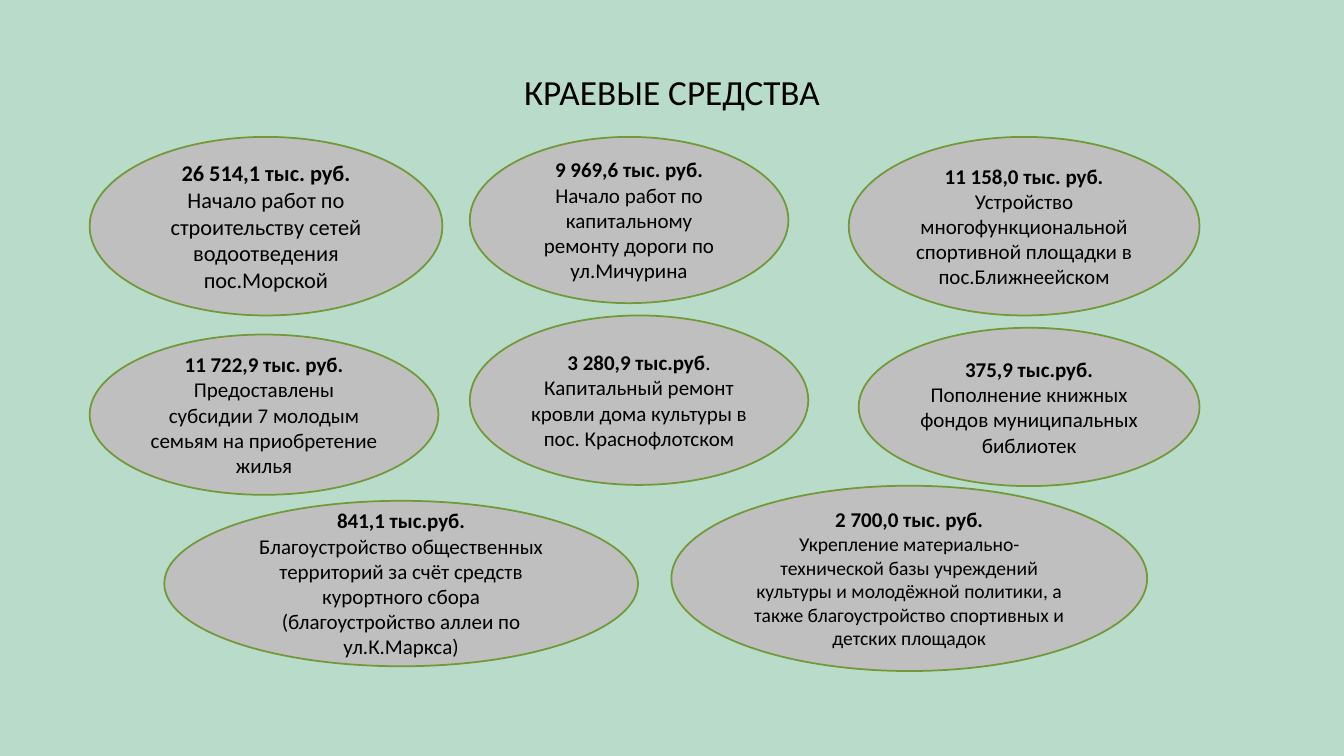
from pptx import Presentation
from pptx import util as u
from pptx.dml.color import RGBColor
from pptx.enum import shapes, text

TITLE = "КРАЕВЫЕ СРЕДСТВА"
TITLE_PLACE = (3.18, 1.73, 27.51, 1.27)

GRANTS = [
    ("26 514,1 тыс. руб.", "", "Начало работ по строительству сетей водоотведения пос.Морской",
     (2.26, 3.45, 8.89, 4.5), 16, 16),
    ("9 969,6 тыс. руб.", "", "Начало работ по капитальному ремонту дороги по ул.Мичурина",
     (11.84, 3.45, 8.03, 4.19), 15, 15),
    ("11 158,0 тыс. руб.", "", "Устройство многофункциональной спортивной площадки в пос.Ближнеейском",
     (21.39, 3.45, 8.84, 4.5), 15, 15),
    ("11 722,9 тыс. руб.", "", "Предоставлены субсидии 7 молодым семьям на приобретение жилья",
     (2.26, 8.43, 8.79, 4.04), 15, 15),
    ("3 280,9 тыс.руб", ".", "Капитальный ремонт кровли дома культуры в пос. Краснофлотском",
     (11.84, 7.95, 8.53, 4.27), 15, 15),
    ("375,9 тыс.руб.", "", "Пополнение книжных фондов муниципальных библиотек",
     (21.64, 8.26, 8.59, 3.99), 15, 15),
    ("841,1 тыс.руб.", "", "Благоустройство общественных территорий за счёт средств курортного сбора "
     "(благоустройство аллеи по ул.К.Маркса)",
     (4.14, 12.62, 11.94, 4.17), 15, 15),
    ("2 700,0 тыс. руб.", "", "Укрепление материально-технической базы учреждений культуры и молодёжной "
     "политики, а также благоустройство спортивных и детских площадок",
     (16.92, 12.24, 11.99, 4.67), 15, 14),
]

FONT = "Calibri"
BLACK = RGBColor(0x00, 0x00, 0x00)
MINT = RGBColor(0xB9, 0xDC, 0xCA)
GREY = RGBColor(0xBF, 0xBF, 0xBF)
GREEN = RGBColor(0x72, 0x98, 0x38)


def place(values):
    return [u.Cm(value) for value in values]


def center(frame):
    frame.word_wrap = True
    frame.vertical_anchor = text.MSO_ANCHOR.MIDDLE
    for para in frame.paragraphs:
        para.alignment = text.PP_ALIGN.CENTER


def style(span, size, bold=False):
    span.font.name = FONT
    span.font.size = u.Pt(size)
    span.font.bold = bold
    span.font.color.rgb = BLACK


def add_title(page):
    box = page.shapes.add_textbox(*place(TITLE_PLACE))
    box.text_frame.text = TITLE
    center(box.text_frame)
    para = box.text_frame.paragraphs[0]
    para.line_spacing = 0.9
    style(para.runs[0], 25.2)


def add_grant(page, amount, ending, purpose, area, amount_size, purpose_size):
    oval = page.shapes.add_shape(shapes.MSO_SHAPE.OVAL, *place(area))
    oval.shadow.inherit = False
    oval.fill.solid()
    oval.fill.fore_color.rgb = GREY
    oval.line.color.rgb = GREEN
    oval.line.width = u.Pt(1.25)
    frame = oval.text_frame
    frame.text = f"{amount}\n{purpose}"
    center(frame)
    first, second = frame.paragraphs
    style(first.runs[0], amount_size, bold=True)
    style(second.runs[0], purpose_size)
    if ending:
        span = first.add_run()
        span.text = ending
        style(span, amount_size)


def main():
    deck = Presentation()
    deck.slide_width, deck.slide_height = u.Cm(33.87), u.Cm(19.05)
    page = deck.slides.add_slide(deck.slide_layouts[6])
    page.background.fill.solid()
    page.background.fill.fore_color.rgb = MINT
    add_title(page)
    for grant in GRANTS:
        add_grant(page, *grant)
    deck.save("out.pptx")


if __name__ == "__main__":
    main()
